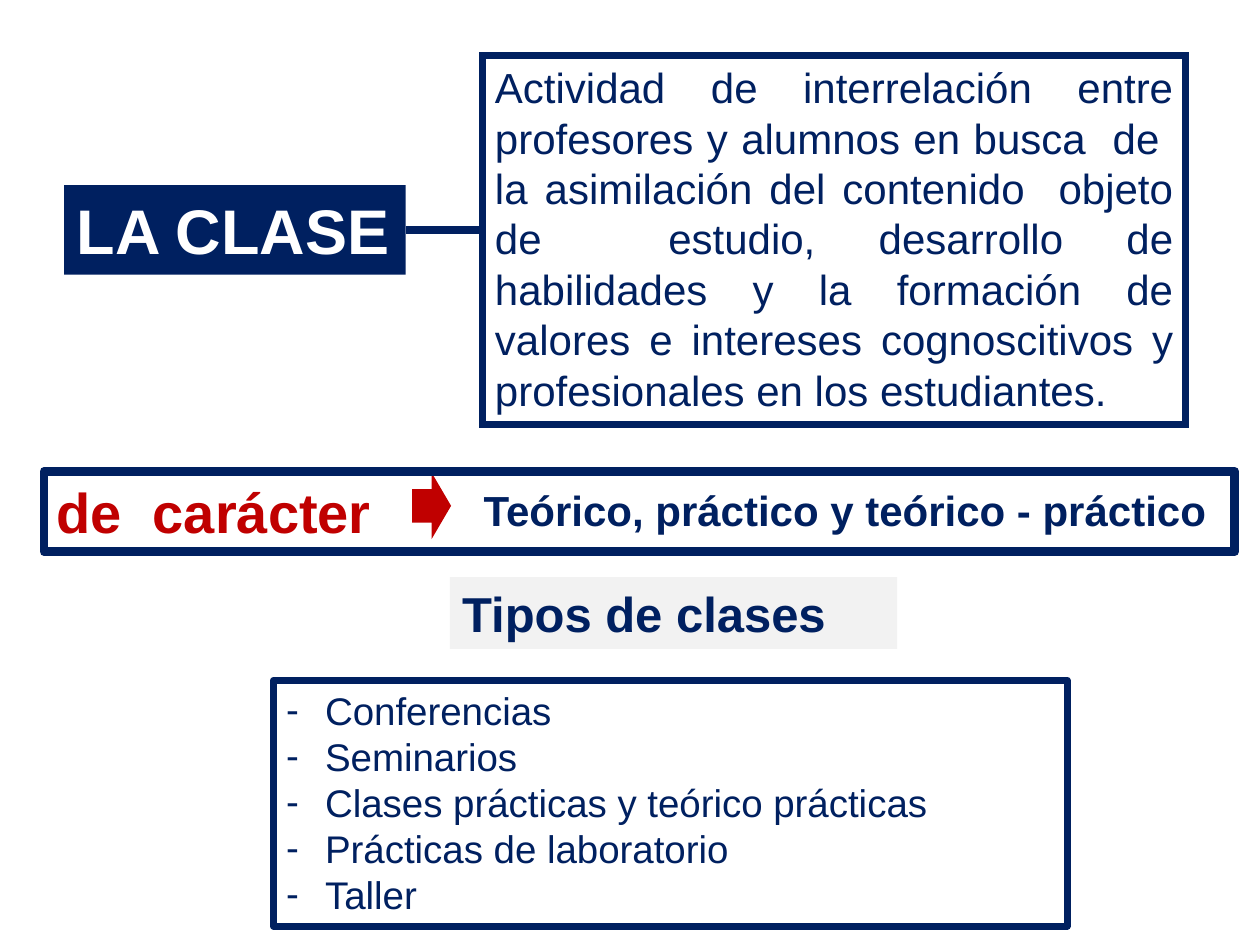
from lxml import etree
from pptx import Presentation
from pptx import util as u
from pptx.dml.color import RGBColor
from pptx.enum import shapes, text
from pptx.oxml import ns

COLORS = {"navy": "002060", "red": "C00000", "white": "FFFFFF",
          "gray": "F2F2F2", "glow": "EEECE1"}


def color(name):
    return RGBColor.from_string(COLORS[name])


class SlideBuilder:
    font_name = "Arial"

    def __init__(self, slide):
        self.slide = slide

    def place(self, shape, box):
        shape.left, shape.top, shape.width, shape.height = map(u.Inches, box)

    def paint(self, shape, fill=None, line=None, width=0):
        if fill:
            shape.fill.solid()
            shape.fill.fore_color.rgb = color(fill)
        else:
            shape.fill.background()
        if line:
            shape.line.color.rgb = color(line)
            shape.line.width = u.Pt(width)
        else:
            shape.line.fill.background()

    def set_text(self, shape, lines, size, ink="navy", bold=False,
                 align=text.PP_ALIGN.LEFT, wrap=True, bullet=None):
        frame = shape.text_frame
        frame.text = "\n".join(lines)
        frame.word_wrap = wrap
        frame.auto_size = text.MSO_AUTO_SIZE.NONE
        frame.vertical_anchor = text.MSO_ANCHOR.TOP
        for paragraph in frame.paragraphs:
            if bullet:
                self.add_bullet(paragraph, bullet)
            paragraph.alignment = align
            paragraph.space_before = u.Pt(0)
            for run in paragraph.runs:
                run.font.name = self.font_name
                run.font.size = u.Pt(size)
                run.font.bold = bold
                run.font.color.rgb = color(ink)

    def add_bullet(self, paragraph, character):
        properties = paragraph._p.get_or_add_pPr()
        indent = u.Inches(0.31)
        properties.set("marL", str(indent))
        properties.set("indent", str(-indent))
        etree.SubElement(properties, ns.qn("a:buChar"), char=character)

    def placeholder(self, index, box, lines, size, fill=None, line=None, width=0, **style):
        shape = self.slide.placeholders[index]
        self.place(shape, box)
        self.paint(shape, fill, line, width)
        self.set_text(shape, lines, size, **style)
        return shape

    def shape(self, box, fill=None, line=None, width=0, kind=shapes.MSO_SHAPE.RECTANGLE):
        shape = self.slide.shapes.add_shape(kind, *map(u.Inches, box))
        shape.shadow.inherit = False
        self.paint(shape, fill, line, width)
        return shape

    def label(self, box, words, size, fill=None, line=None, width=0, **style):
        shape = self.shape(box, fill, line, width)
        self.set_text(shape, [words], size, **style)
        return shape

    def square_corners(self, shape):
        outline = shape._element.spPr.find(ns.qn("a:ln"))
        etree.SubElement(outline, ns.qn("a:miter"), lim="800000")

    def text_shadow(self, shape):
        for run in shape.text_frame.paragraphs[0].runs:
            effects = etree.Element(ns.qn("a:effectLst"))
            shadow = etree.SubElement(effects, ns.qn("a:outerShdw"),
                                      dist="35921", dir="2700000")
            etree.SubElement(shadow, ns.qn("a:srgbClr"), val=COLORS["glow"])
            run._r.rPr.find(ns.qn("a:solidFill")).addnext(effects)

    def link(self, source, start, end, ink, width):
        connector = self.slide.shapes.add_connector(
            shapes.MSO_CONNECTOR.STRAIGHT, *map(u.Inches, start + end))
        connector.begin_connect(source, 3)
        connector.end_y = connector.begin_y
        connector.line.color.rgb = color(ink)
        connector.line.width = u.Pt(width)
        etree.SubElement(connector._element.spPr, ns.qn("a:effectLst"))


def main():
    presentation = Presentation()
    presentation.slide_width = u.Inches(10)
    presentation.slide_height = u.Inches(7.5)
    slide = presentation.slides.add_slide(presentation.slide_layouts[1])
    builder = SlideBuilder(slide)

    title = builder.placeholder(0, (0.51, 1.47, 2.71, 0.71), ["LA CLASE"], 36,
                                fill="navy", ink="white", bold=True, wrap=False)
    definition = builder.label(
        (3.83, 0.44, 5.58, 2.93),
        "Actividad de interrelación entre profesores y alumnos en busca  de  la "
        "asimilación del contenido  objeto de  estudio, desarrollo de habilidades y "
        "la formación de valores e intereses cognoscitivos y profesionales en los "
        "estudiantes.",
        24, fill="white", line="navy", width=4, align=text.PP_ALIGN.JUSTIFY)
    builder.square_corners(definition)
    builder.link(title, (3.22, 1.82), (3.82, 1.82), "navy", 5)

    builder.label((3.74, 3.8, 6.06, 0.5), "Teórico, práctico y teórico - práctico",
                  24, fill="white", bold=True)
    character = builder.label((0.35, 3.74, 2.72, 0.64), "de  carácter", 32,
                              ink="red", bold=True, wrap=False)
    builder.text_shadow(character)
    builder.shape((3.27, 3.75, 0.31, 0.53), fill="red",
                  kind=shapes.MSO_SHAPE.RIGHT_ARROW)
    builder.shape((0.35, 3.74, 9.45, 0.64), line="navy", width=5)

    builder.label((3.57, 4.58, 3.55, 0.57), "Tipos de clases", 28,
                  fill="gray", bold=True)
    builder.placeholder(
        1, (2.17, 5.4, 6.3, 1.95),
        ["Conferencias", "Seminarios", "Clases prácticas y teórico prácticas",
         "Prácticas de laboratorio", "Taller"],
        22, line="navy", width=4, bullet="-")

    presentation.save("out.pptx")


if __name__ == "__main__":
    main()
